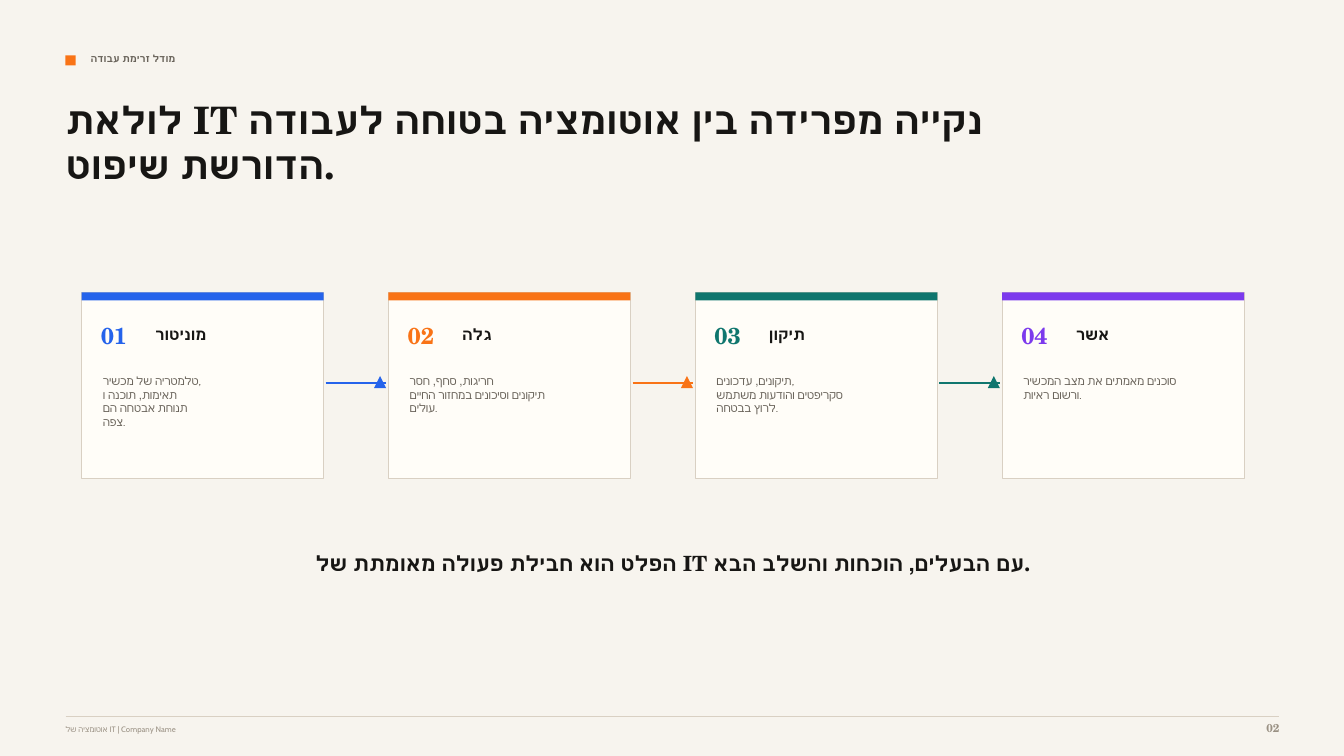
from lxml import etree
from pptx import Presentation
from pptx.dml.color import RGBColor
from pptx.enum import shapes, text
from pptx.oxml import ns
from pptx.util import Inches, Pt

COLORS = {
    "paper": "F7F4EE",
    "card": "FFFDF8",
    "border": "D9D0C3",
    "ink": "171614",
    "body": "69635A",
    "muted": "9A9184",
    "blue": "2563EB",
    "orange": "F97316",
    "green": "0F766E",
    "purple": "7C3AED",
}
SANS = "Cabin"
SERIF = "TeX Gyre Schola"

STEPS = [
    ("מוניטור", "blue", ["טלמטריה של מכשיר,", "תאימות, תוכנה ו", "תנוחת אבטחה הם", "צפה."]),
    ("גלה", "orange", ["חריגות, סחף, חסר", "תיקונים וסיכונים במחזור החיים", "עולים."]),
    ("תיקון", "green", ["תיקונים, עדכונים,", "סקריפטים והודעות משתמש", "לרוץ בבטחה."]),
    ("אשר", "purple", ["סוכנים מאמתים את מצב המכשיר", "ורשום ראיות."]),
]
FIRST_CARD, LAST_CARD = 0.81, 9.94
CARD_PITCH = (LAST_CARD - FIRST_CARD) / (len(STEPS) - 1)
CARD_TOP, CARD_WIDTH, CARD_HEIGHT = 2.9, 2.4, 1.85
ARROW_Y = 3.8


def rgb(name):
    return RGBColor.from_string(COLORS[name])


def add_block(slide, left, top, width, height, fill, border=None,
              kind=shapes.MSO_SHAPE.RECTANGLE):
    shape = slide.shapes.add_shape(
        kind, Inches(left), Inches(top), Inches(width), Inches(height))
    shape.shadow.inherit = False
    shape.fill.solid()
    shape.fill.fore_color.rgb = rgb(fill)
    if border:
        shape.line.color.rgb = rgb(border)
        shape.line.width = Pt(0.75)
    else:
        shape.line.fill.background()


def add_rule(slide, left, y, length, color, weight):
    connector = slide.shapes.add_connector(
        shapes.MSO_CONNECTOR.STRAIGHT,
        Inches(left), Inches(y), Inches(left + length), Inches(y))
    connector.line.color.rgb = rgb(color)
    connector.line.width = Pt(weight)
    properties = connector.element.find(ns.qn("p:spPr"))
    etree.SubElement(properties, ns.qn("a:effectLst"))


def add_text(slide, left, top, width, height, lines, size, font, color,
             bold=True, align=text.PP_ALIGN.LEFT):
    box = slide.shapes.add_textbox(
        Inches(left), Inches(top), Inches(width), Inches(height))
    frame = box.text_frame
    frame.word_wrap = True
    frame.margin_left = frame.margin_right = 0
    frame.margin_top = frame.margin_bottom = 0
    frame.text = "\n".join(lines)
    for paragraph in frame.paragraphs:
        paragraph.alignment = align
        paragraph.font.size = Pt(size)
        paragraph.font.name = font
        paragraph.font.bold = bold
        paragraph.font.color.rgb = rgb(color)


def add_card(slide, left, number, title, color, lines):
    add_block(slide, left, CARD_TOP, CARD_WIDTH, CARD_HEIGHT, "card", "border")
    add_block(slide, left, CARD_TOP, CARD_WIDTH, 0.08, color)
    add_text(slide, left + 0.19, 3.19, 0.46, 0.29, [f"{number:02d}"], 16.5, SERIF, color)
    add_text(slide, left + 0.73, 3.22, 1.33, 0.21, [title], 11.2, SANS, "ink")
    add_text(slide, left + 0.21, 3.71, 1.92, 0.71, lines, 8.2, SANS, "body", bold=False)


def add_arrow(slide, left, color):
    add_rule(slide, left, ARROW_Y, 0.6, color, 1.75)
    add_block(slide, left + 0.48, ARROW_Y - 0.07, 0.12, 0.12, color,
              kind=shapes.MSO_SHAPE.ISOSCELES_TRIANGLE)


def add_header(slide):
    add_block(slide, 0.65, 0.55, 0.1, 0.1, "orange")
    add_text(slide, 0.9, 0.52, 6.46, 0.19, ["מודל זרימת עבודה"], 7.1, SANS, "body")
    add_text(slide, 0.65, 0.96, 9.38, 1.08,
             ["לולאת IT נקייה מפרידה בין אוטומציה בטוחה לעבודה הדורשת שיפוט."],
             27, SERIF, "ink")


def add_footer(slide):
    add_rule(slide, 0.65, 7.11, 12.04, "border", 0.75)
    add_text(slide, 0.65, 7.19, 7.92, 0.15, ["אוטומציה של IT | Company Name"],
             5.6, SANS, "muted", bold=False)
    add_text(slide, 12.19, 7.15, 0.5, 0.19, ["02"], 8.2, SERIF, "muted",
             align=text.PP_ALIGN.RIGHT)


def main():
    presentation = Presentation()
    presentation.slide_width = Inches(13.33)
    presentation.slide_height = Inches(7.5)
    slide = presentation.slides.add_slide(presentation.slide_layouts[6])
    slide.background.fill.solid()
    slide.background.fill.fore_color.rgb = rgb("paper")

    add_header(slide)
    for index, (title, color, lines) in enumerate(STEPS):
        left = FIRST_CARD + index * CARD_PITCH
        add_card(slide, left, index + 1, title, color, lines)
        if index < len(STEPS) - 1:
            add_arrow(slide, left + CARD_WIDTH + 0.02, color)
    add_text(slide, 1.83, 5.46, 9.69, 0.44,
             ["הפלט הוא חבילת פעולה מאומתת של IT עם הבעלים, הוכחות והשלב הבא."],
             15, SERIF, "ink", align=text.PP_ALIGN.CENTER)
    add_footer(slide)
    presentation.save("out.pptx")


if __name__ == "__main__":
    main()
